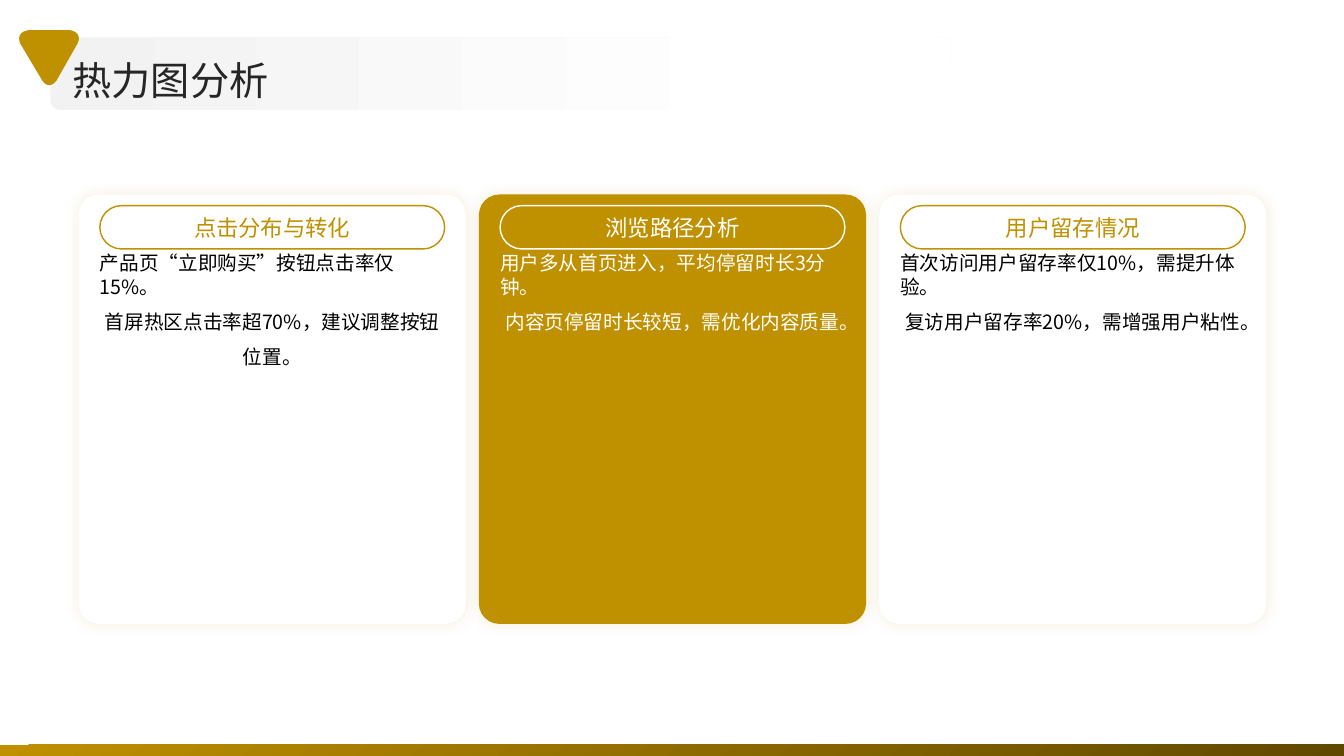
from lxml.etree import SubElement
from pptx import Presentation
from pptx.dml.color import RGBColor
from pptx.enum.lang import MSO_LANGUAGE_ID as Language
from pptx.enum.shapes import MSO_SHAPE as Shape
from pptx.enum.text import MSO_ANCHOR as Anchor, PP_ALIGN as Align
from pptx.oxml.ns import qn
from pptx.util import Inches, Pt

GOLD, WHITE, BLACK = "BF9000", "FFFFFF", "000000"
CARD_LEFT, CARD_TOP, CARD_WIDTH, CARD_HEIGHT, CARD_PITCH = 0.78, 1.93, 3.84, 4.26, 3.97
CARD_PADDING = 0.21

# title, two statements, background, accent colour, body colour
CARDS = [
    ("点击分布与转化", "产品页“立即购买”按钮点击率仅15%。",
     "首屏热区点击率超70%，建议调整按钮位置。", WHITE, GOLD, BLACK),
    ("浏览路径分析", "用户多从首页进入，平均停留时长3分钟。",
     "内容页停留时长较短，需优化内容质量。", GOLD, WHITE, WHITE),
    ("用户留存情况", "首次访问用户留存率仅10%，需提升体验。",
     "复访用户留存率20%，需增强用户粘性。", WHITE, GOLD, BLACK),
]

# Triangle pointing down: each corner is a cubic curve from its first to its last point
TRIANGLE_CORNERS = [
    [(0.7, 0.3), (0.7, 0.3), (0.82, 0.32), (0.77, 0.43)],
    [(0.56, 0.8), (0.56, 0.8), (0.49, 0.9), (0.42, 0.8)],
    [(0.2, 0.43), (0.2, 0.43), (0.15, 0.32), (0.28, 0.3)],
]


def color(value):
    return RGBColor.from_string(value)


def curve_points(corner, steps=12):
    """Return evenly sampled points of a cubic Bezier curve."""
    points = []
    for step in range(steps + 1):
        t = step / steps
        weights = ((1 - t) ** 3, 3 * t * (1 - t) ** 2, 3 * t * t * (1 - t), t ** 3)
        points.append(tuple(sum(weight * point[axis] for weight, point in zip(weights, corner))
                            for axis in (0, 1)))
    return points


class SlideBuilder:
    """Holds the slide and its font, and draws each kind of element."""

    def __init__(self, slide, font="Noto Sans CJK SC"):
        self.slide = slide
        self.font = font

    def box(self, kind, left, top, width, height, fill=None, gradient=None, angle=0,
            radius=None, line=None, glow=None):
        shape = self.slide.shapes.add_shape(
            kind, Inches(left), Inches(top), Inches(width), Inches(height))
        if radius is not None:
            shape.adjustments[0] = radius
        if gradient:
            shape.fill.gradient()
            shape.fill.gradient_angle = angle
            for stop, (position, value) in zip(shape.fill.gradient_stops, gradient):
                stop.position = position
                stop.color.rgb = color(value)
        self.finish(shape, fill, line)
        if glow:
            self.add_glow(shape, glow)
        return shape

    def finish(self, shape, fill=None, line=None):
        """Set the plain fill and outline, and drop the theme shadow."""
        shape.shadow.inherit = False
        if fill:
            shape.fill.solid()
            shape.fill.fore_color.rgb = color(fill)
        if line:
            shape.line.color.rgb = color(line)
            shape.line.width = Pt(1)
        else:
            shape.line.fill.background()

    def add_glow(self, shape, value):
        """Add a soft, centred shadow of 15 % opacity."""
        effects = shape._element.spPr.find(qn("a:effectLst"))
        shadow = SubElement(effects, qn("a:outerShdw"), blurRad=str(Pt(10)), dist="0",
                            dir="0", algn="ctr", rotWithShape="0")
        shade = SubElement(shadow, qn("a:srgbClr"), val=value)
        SubElement(shade, qn("a:alpha"), val="15000")

    def outline(self, points, fill):
        start, *rest = [(Inches(x), Inches(y)) for x, y in points]
        builder = self.slide.shapes.build_freeform(*start)
        builder.add_line_segments(rest, close=True)
        self.finish(builder.convert_to_shape(), fill)

    def text_box(self, left, top, width, height, anchor=Anchor.TOP):
        frame = self.slide.shapes.add_textbox(
            Inches(left), Inches(top), Inches(width), Inches(height)).text_frame
        frame.word_wrap = True
        frame.vertical_anchor = anchor
        frame.margin_left = frame.margin_right = frame.margin_top = frame.margin_bottom = 0
        return frame

    def set_text(self, paragraph, text, size, fill, align=Align.LEFT, spacing=1.0):
        paragraph.alignment = align
        paragraph.line_spacing = spacing
        run = paragraph.add_run()
        run.text = text
        run.font.size = Pt(size)
        run.font.color.rgb = color(fill)
        run.font.name = self.font
        run.font.language_id = Language.SIMPLIFIED_CHINESE
        SubElement(run._r.rPr, qn("a:ea"), typeface=self.font)

    def card(self, left, title, first, second, background, accent, body):
        inner_left = left + CARD_PADDING
        inner_width = CARD_WIDTH - 2 * CARD_PADDING
        self.box(Shape.ROUNDED_RECTANGLE, left, CARD_TOP, CARD_WIDTH, CARD_HEIGHT,
                 fill=background, radius=0.053, glow=GOLD)
        statements = self.text_box(inner_left, 2.49, inner_width, 3.13)
        self.set_text(statements.paragraphs[0], first, 14, body)
        self.set_text(statements.add_paragraph(), second, 14, body, Align.CENTER, 1.5)
        self.box(Shape.ROUNDED_RECTANGLE, inner_left, 2.04, inner_width, 0.43,
                 fill=background, radius=0.5, line=accent)
        heading = self.text_box(inner_left, 2.1, inner_width, 0.3)
        self.set_text(heading.paragraphs[0], title, 16, accent, Align.CENTER, 1.1)

    def header(self, title):
        self.box(Shape.ROUNDED_RECTANGLE, 0.5, 0.37, 8.94, 0.72, radius=0.139,
                 gradient=[(0, "F2F2F2"), (0.8, WHITE)])
        frame = self.text_box(0.72, 0.51, 11.67, 0.51, Anchor.MIDDLE)
        self.set_text(frame.paragraphs[0], title, 28, "262626", spacing=1.1)
        self.outline([point for corner in TRIANGLE_CORNERS
                      for point in curve_points(corner)], GOLD)


def main():
    presentation = Presentation()
    presentation.slide_width, presentation.slide_height = Inches(13.33), Inches(7.5)
    builder = SlideBuilder(presentation.slides.add_slide(presentation.slide_layouts[6]))
    builder.box(Shape.RECTANGLE, 0, 7.39, 13.33, 0.12,
                gradient=[(0, GOLD), (1, "604800")], angle=315)
    for index, card in enumerate(CARDS):
        builder.card(CARD_LEFT + index * CARD_PITCH, *card)
    builder.header("热力图分析")
    presentation.save("out.pptx")


if __name__ == "__main__":
    main()
